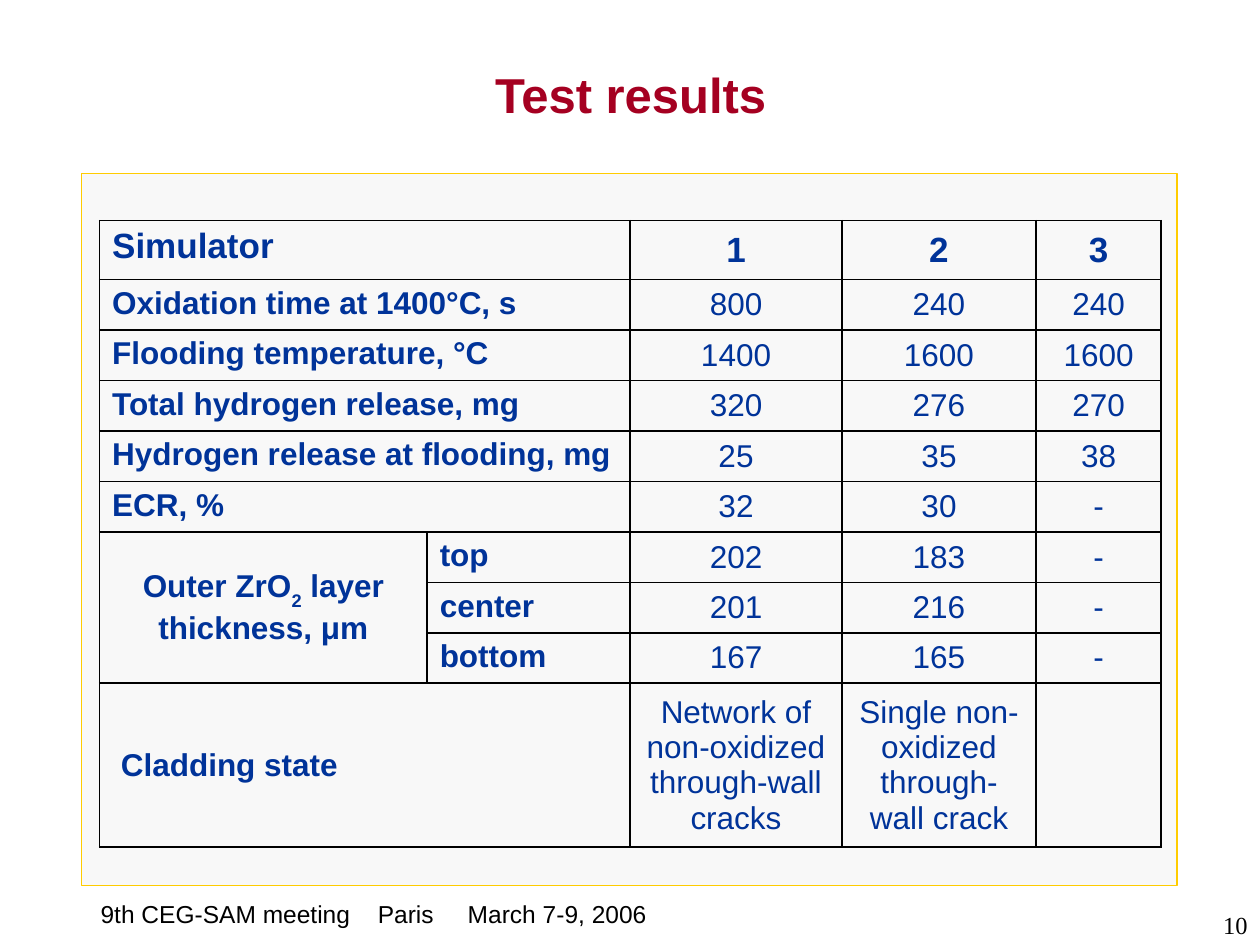
from lxml import etree
from pptx import Presentation
from pptx.dml.color import RGBColor
from pptx.enum import shapes, text
from pptx.oxml.ns import qn
from pptx.util import Pt

THEME = {
    "font": "Arial", "number_font": "Times New Roman",
    "title": "A50021", "table": "003399", "text": "000000",
    "panel": "F8F8F8", "panel_line": "FFCC00", "border": "000000",
    "title_size": 28, "head_size": 20, "body_size": 18, "small_size": 14,
}
TITLE = "Test results"
FOOTER = ["9th CEG-SAM meeting", "Paris", "March 7-9, 2006"]
FOOTER_TABS = [158.4, 209.8]
SLIDE_NUMBER = "10"
LAYER = [("Outer ZrO", False), ("2", True), (" layer thickness, μm", False)]
# group label, row label, values for the three simulators
ROWS = [
    ("Simulator", "", ["1", "2", "3"]),
    ("Oxidation time at 1400°С, s", "", ["800", "240", "240"]),
    ("Flooding temperature, °С", "", ["1400", "1600", "1600"]),
    ("Total hydrogen release, mg", "", ["320", "276", "270"]),
    ("Hydrogen release at flooding, mg", "", ["25", "35", "38"]),
    ("ECR, %", "", ["32", "30", "-"]),
    (LAYER, "top", ["202", "183", "-"]),
    ("", "center", ["201", "216", "-"]),
    ("", "bottom", ["167", "165", "-"]),
    ("Cladding state", "", ["Network of non-oxidized through-wall cracks",
                            "Single non-oxidized through-wall crack", ""]),
]
COL_WIDTHS = [187.2, 116, 121, 111, 71.4]
ROW_HEIGHTS = [33.8] + [28.8] * 8 + [93.2]
LAST = len(ROWS) - 1
LAYER_ROW, LAYER_SPAN = 6, 3

LEFT, CENTER, RIGHT = text.PP_ALIGN.LEFT, text.PP_ALIGN.CENTER, text.PP_ALIGN.RIGHT
TOP, MIDDLE = text.MSO_ANCHOR.TOP, text.MSO_ANCHOR.MIDDLE


def rgb(name):
    return RGBColor.from_string(THEME[name])


def style(p, size, color, bold=False, align=LEFT, font="font"):
    p.alignment = align
    p.font.name, p.font.size, p.font.bold = THEME[font], Pt(THEME[size]), bold
    p.font.color.rgb = rgb(color)


def add_borders(cell):
    tc_pr = cell._tc.get_or_add_tcPr()
    for i, side in enumerate(("lnL", "lnR", "lnT", "lnB")):
        ln = etree.Element(qn("a:" + side), w=str(Pt(1)))
        fill = etree.SubElement(ln, qn("a:solidFill"))
        etree.SubElement(fill, qn("a:srgbClr"), val=THEME["border"])
        tc_pr.insert(i, ln)


def fill_cell(cell, content, size, bold, align, anchor):
    cell.vertical_anchor = anchor
    p = cell.text_frame.paragraphs[0]
    style(p, size, "table", bold, align)
    runs = [(content, False)] if isinstance(content, str) else content
    for words, subscript in runs:
        if words:
            r = p.add_run()
            r.text = words
            if subscript:
                r.font._element.set("baseline", "-30000")


def add_results(slide):
    frame = slide.shapes.add_table(len(ROWS), len(COL_WIDTHS), Pt(56.9), Pt(126),
                                   Pt(sum(COL_WIDTHS)), Pt(sum(ROW_HEIGHTS)))
    table = frame.table
    table.first_row = table.horz_banding = False
    for col, width in zip(table.columns, COL_WIDTHS):
        col.width = Pt(width)
    for row, height in zip(table.rows, ROW_HEIGHTS):
        row.height = Pt(height)
    for i, (group, label, values) in enumerate(ROWS):
        size = "head_size" if i == 0 else "body_size"
        in_layer = LAYER_ROW <= i < LAYER_ROW + LAYER_SPAN
        if not in_layer:
            table.cell(i, 0).merge(table.cell(i, 1))
        fill_cell(table.cell(i, 0), group, size, True, CENTER if in_layer else LEFT,
                  MIDDLE if in_layer or i == LAST else TOP)
        fill_cell(table.cell(i, 1), label, size, True, LEFT, TOP)
        for j, value in enumerate(values, 2):
            fill_cell(table.cell(i, j), value, size, i == 0, CENTER, MIDDLE)
    table.cell(LAYER_ROW, 0).merge(table.cell(LAYER_ROW + LAYER_SPAN - 1, 0))
    table.cell(LAST, 0).margin_left = Pt(12.2)
    for cell in table.iter_cells():
        cell.fill.background()
        add_borders(cell)


def main():
    prs = Presentation()
    prs.slide_width, prs.slide_height = Pt(720), Pt(540)
    slide = prs.slides.add_slide(prs.slide_layouts[5])

    panel = slide.shapes.add_shape(shapes.MSO_SHAPE.RECTANGLE,
                                   Pt(46.6), Pt(99.2), Pt(625.8), Pt(406.8))
    panel.shadow.inherit = False
    panel.fill.solid()
    panel.fill.fore_color.rgb = rgb("panel")
    panel.line.color.rgb = rgb("panel_line")
    panel.line.width = Pt(1)

    footer = slide.shapes.add_textbox(Pt(50.4), Pt(510), Pt(375), Pt(26.6))
    tf = footer.text_frame
    tf.word_wrap = True
    p = tf.paragraphs[0]
    p.text = "\t".join(FOOTER)
    tabs = etree.SubElement(p._p.get_or_add_pPr(), qn("a:tabLst"))
    for pos in FOOTER_TABS:
        etree.SubElement(tabs, qn("a:tab"), pos=str(Pt(pos)), algn="l")
    style(p, "small_size", "text")

    number = slide.shapes.add_textbox(Pt(570.2), Pt(517), Pt(149.8), Pt(23))
    tf = number.text_frame
    tf.word_wrap = False
    tf.vertical_anchor = MIDDLE
    tf.text = SLIDE_NUMBER
    style(tf.paragraphs[0], "small_size", "text", align=RIGHT, font="number_font")

    title = slide.shapes.title
    title.left, title.top, title.width, title.height = Pt(274.3), Pt(33.1), Pt(172.1), Pt(41)
    tf = title.text_frame
    tf.word_wrap = False
    tf.auto_size = text.MSO_AUTO_SIZE.SHAPE_TO_FIT_TEXT
    tf.vertical_anchor = TOP
    tf.text = TITLE
    style(tf.paragraphs[0], "title_size", "title", True, CENTER)

    add_results(slide)
    prs.save("out.pptx")


if __name__ == "__main__":
    main()
